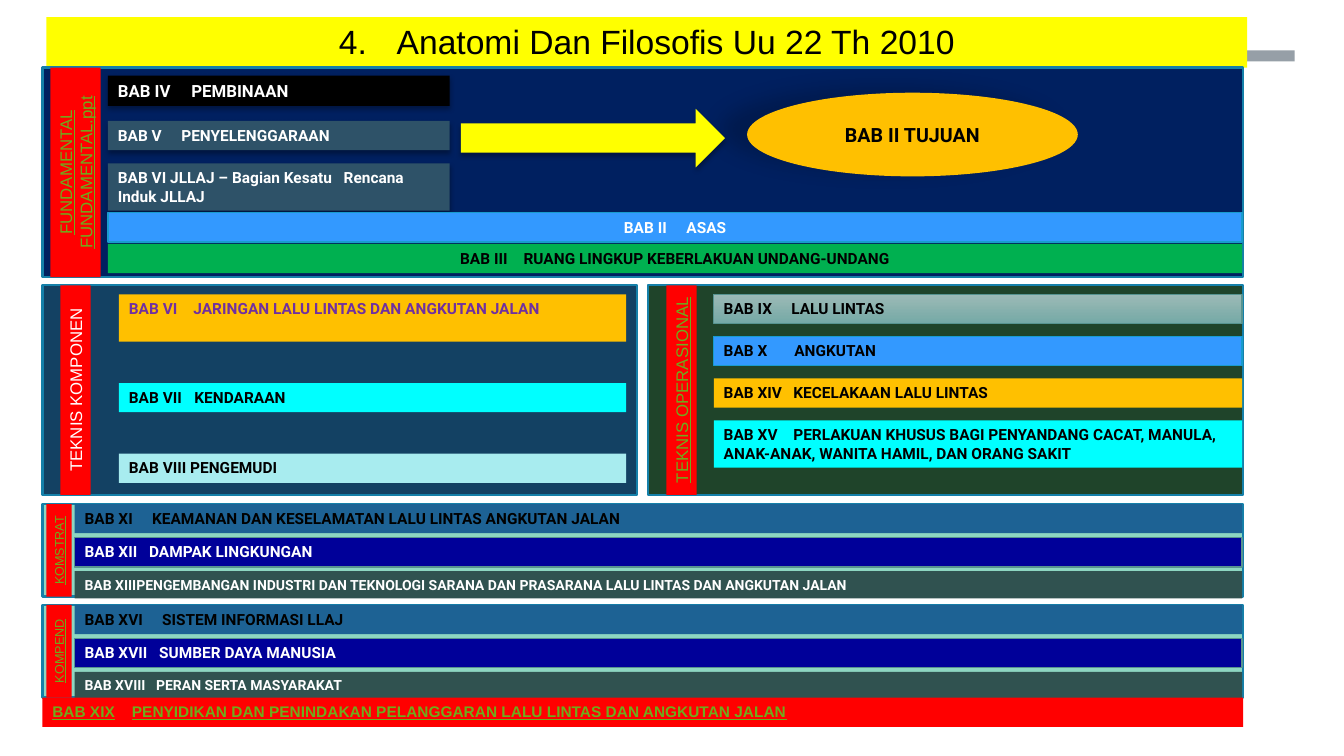
from dataclasses import dataclass

from lxml import etree
from pptx import Presentation
from pptx.dml.color import RGBColor
from pptx.enum import shapes, text
from pptx.oxml import ns
from pptx.util import Inches, Pt

RECT = shapes.MSO_SHAPE.RECTANGLE
LEFT, CENTER = text.PP_ALIGN.LEFT, text.PP_ALIGN.CENTER
BLACK, WHITE, RED, GREEN = "000000", "FFFFFF", "FF0000", "6EAC1C"
BAR_H, TALL_H = 0.29, 0.47
SOFT_SHADOW = (32, 3.5, 2.2, 90)
OVAL_SHADOW = (18, 14.5, 19, 192)


@dataclass
class Box:
    left: float
    top: float
    width: float
    height: float
    fill: str | tuple[str, str]
    line: str = ""
    line_w: float = 1
    shadow: tuple | None = None
    kind: int = RECT


@dataclass
class Bar(Box):
    text: str = ""
    color: str = BLACK
    tab: float = 0
    size: float = 11
    align: int = LEFT
    font: str = "Roboto"
    underline: bool = False


@dataclass
class Label:
    """A red strip whose text reads upwards."""
    left: float
    top: float
    width: float
    height: float
    lines: tuple[str, ...]
    size: float = 12
    color: str = GREEN


def rgb(value: str) -> RGBColor:
    return RGBColor.from_string(value)


def add_node(parent, tag: str, **attrs):
    values = {key: str(value) for key, value in attrs.items()}
    return etree.SubElement(parent, ns.qn(tag), values)


def add_shadow(sp, opacity: float, blur: float, dist: float, angle: float) -> None:
    effects = sp.element.spPr.find(ns.qn("a:effectLst"))
    outer = add_node(effects, "a:outerShdw", blurRad=Pt(blur), dist=Pt(dist),
                     dir=angle * 60000, algn="ctr", rotWithShape=0)
    color = add_node(outer, "a:srgbClr", val=BLACK)
    add_node(color, "a:alpha", val=opacity * 1000)


def add_box(s, box: Box):
    lengths = map(Inches, (box.left, box.top, box.width, box.height))
    sp = s.shapes.add_shape(box.kind, *lengths)
    sp.shadow.inherit = False
    if isinstance(box.fill, tuple):
        sp.fill.gradient()
        sp.fill.gradient_angle = 270
        for stop, color in zip(sp.fill.gradient_stops, box.fill):
            stop.color.rgb = rgb(color)
    else:
        sp.fill.solid()
        sp.fill.fore_color.rgb = rgb(box.fill)
    if box.line:
        sp.line.color.rgb = rgb(box.line)
        sp.line.width = Pt(box.line_w)
    else:
        sp.line.fill.background()
    if box.shadow:
        add_shadow(sp, *box.shadow)
    return sp


def write(p, words: str, color: str, align: int, **font_format) -> None:
    p.alignment = align
    r = p.add_run()
    r.text = words
    r.font.color.rgb = rgb(color)
    for name, value in font_format.items():
        setattr(r.font, name, value)


def add_bar(s, bar: Bar):
    sp = add_box(s, bar)
    tf = sp.text_frame
    tf.word_wrap = True
    tf.vertical_anchor = text.MSO_ANCHOR.TOP
    p = tf.paragraphs[0]
    write(p, bar.text, bar.color, bar.align, name=bar.font,
          size=Pt(bar.size), bold=True, underline=bar.underline)
    if bar.tab:
        tabs = add_node(p._p.get_or_add_pPr(), "a:tabLst")
        add_node(tabs, "a:tab", pos=Inches(bar.tab), algn="l")
    return sp


def add_label(s, label: Label) -> None:
    # The box is laid out flat around the strip's centre, then turned
    shift = (label.height - label.width) / 2
    sp = add_box(s, Box(label.left - shift, label.top + shift,
                        label.height, label.width, RED))
    sp.rotation = 270
    tf = sp.text_frame
    tf.word_wrap = True
    tf.vertical_anchor = text.MSO_ANCHOR.TOP
    for i, words in enumerate(label.lines):
        p = tf.add_paragraph() if i else tf.paragraphs[0]
        write(p, words, label.color, CENTER, name="Arial",
              size=Pt(label.size), underline=label.color == GREEN)


def add_panel(s, left: float, top: float, width: float, height: float, fill: str) -> None:
    add_box(s, Box(left, top, width, height, fill, "1580A9", 1.75))


def add_title(s) -> None:
    accent = add_box(s, Box(8.79, 0.5, 4.05, 0.11, "969FA7"))
    title = s.shapes.title
    title.element.addprevious(accent.element)
    title.left, title.top, title.width, title.height = map(Inches, (0.46, 0.17, 11.91, 0.5))
    title.fill.solid()
    title.fill.fore_color.rgb = rgb("FFFF00")
    tf = title.text_frame
    tf.auto_size = text.MSO_AUTO_SIZE.NONE
    tf.vertical_anchor = text.MSO_ANCHOR.MIDDLE
    p = tf.paragraphs[0]
    p.line_spacing = 0.99
    write(p, " Anatomi Dan Filosofis Uu 22 Th 2010", BLACK, CENTER,
          name="Arial", size=Pt(24))
    pPr = p._p.get_or_add_pPr()
    pPr.set("marL", str(Inches(0.5)))
    pPr.set("indent", str(Inches(-0.5)))
    add_node(pPr, "a:buFont", typeface="+mj-lt")
    add_node(pPr, "a:buAutoNum", type="arabicPeriod", startAt=4)


def add_fundamental(s) -> None:
    add_panel(s, 0.42, 0.67, 11.91, 2.08, "002060")
    for top, height, fill, words, tab, size in (
            (0.75, 0.3, BLACK, "BAB IV\tPEMBINAAN", 0.73, 12),
            (1.2, BAR_H, "2E5268", "BAB V\tPENYELENGGARAAN", 0.63, 11),
            (1.62, TALL_H, "2E5268",
             "BAB VI JLLAJ – Bagian Kesatu\tRencana Induk JLLAJ", 2.24, 11)):
        add_bar(s, Bar(1.07, top, 3.39, height, fill, shadow=SOFT_SHADOW,
                       text=words, color=WHITE, tab=tab, size=size))
    add_bar(s, Bar(1.07, 2.11, 11.25, BAR_H, "3399FF", "189CCE", text="BAB II\tASAS",
                   color=WHITE, tab=0.62, align=CENTER))
    add_bar(s, Bar(1.07, 2.42, 11.25, BAR_H, "00B050", tab=0.63, align=CENTER,
                   text="BAB III\tRUANG LINGKUP KEBERLAKUAN UNDANG-UNDANG"))
    goal = add_bar(s, Bar(7.41, 0.92, 3.28, 0.83, "FFC000", shadow=OVAL_SHADOW,
                          kind=shapes.MSO_SHAPE.OVAL, text="BAB II TUJUAN",
                          size=14, align=CENTER))
    goal.text_frame.vertical_anchor = text.MSO_ANCHOR.MIDDLE
    add_box(s, Box(4.57, 1.08, 2.62, 0.58, "FFFF00", shadow=SOFT_SHADOW,
                   kind=shapes.MSO_SHAPE.RIGHT_ARROW))
    add_label(s, Label(0.5, 0.67, 0.5, 2.08, ("FUNDAMENTAL", "FUNDAMENTAL.ppt")))


def add_technical(s) -> None:
    # Components
    add_panel(s, 0.42, 2.83, 5.9, 2.08, "134163")
    add_label(s, Label(0.6, 2.83, 0.3, 2.08, ("TEKNIS KOMPONEN",), color=WHITE))
    for top, height, fill, words, color, tab in (
            (2.92, TALL_H, "FFC000", "BAB VI\tJARINGAN LALU LINTAS DAN ANGKUTAN JALAN",
             "7030A0", 0.64),
            (3.8, BAR_H, "00FFFF", "BAB VII\tKENDARAAN", BLACK, 0.65),
            (4.5, BAR_H, "A8ECEF", "BAB VIII PENGEMUDI", BLACK, 0)):
        add_bar(s, Bar(1.18, top, 5.03, height, fill, text=words, color=color, tab=tab))

    # Operations
    add_panel(s, 6.43, 2.83, 5.9, 2.08, "1F442A")
    add_label(s, Label(6.61, 2.83, 0.3, 2.08, ("TEKNIS OPERASIONAL",)))
    for i, (height, fill, line, words, tab) in enumerate((
            (BAR_H, ("9CBAB6", "75A9A6"), "579490", "BAB IX\tLALU LINTAS", 0.67),
            (BAR_H, "3399FF", "189CCE", "BAB X\tANGKUTAN", 0.7),
            (BAR_H, "FFC000", "", "BAB XIV\tKECELAKAAN LALU LINTAS", 0.69),
            (TALL_H, "00FFFF", "", "BAB XV\tPERLAKUAN KHUSUS BAGI PENYANDANG CACAT, "
             "MANULA, ANAK-ANAK, WANITA HAMIL, DAN ORANG SAKIT", 0.69))):
        add_bar(s, Bar(7.08, 2.92 + i * 1.25 / 3, 5.24, height, fill, line,
                       text=words, tab=tab))


def add_support(s, top: float, name: str, chapters: tuple) -> None:
    add_panel(s, 0.42, top, 11.91, 0.92, "8DD6C1")
    styles = (("1D6294", "", BLACK, BAR_H, 11), ("000099", "579490", WHITE, BAR_H, 11),
              ("305250", "", WHITE, 0.27, 10))
    for i, ((words, tab), (fill, line, color, height, size)) in enumerate(zip(chapters, styles)):
        add_bar(s, Bar(0.74, top + i / 3, 11.58, height, fill, line,
                       text=words, color=color, tab=tab, size=size))
    add_label(s, Label(0.46, top, 0.25, 0.92, (name,), 9))


def main() -> None:
    prs = Presentation()
    prs.slide_width, prs.slide_height = Inches(13.33), Inches(7.5)
    s = prs.slides.add_slide(prs.slide_layouts[5])
    add_title(s)
    add_fundamental(s)
    add_technical(s)
    add_support(s, 5, "KOMSTRAT", (
        ("BAB XI\tKEAMANAN DAN KESELAMATAN LALU LINTAS ANGKUTAN JALAN", 0.67),
        ("BAB XII\tDAMPAK LINGKUNGAN", 0.64),
        ("BAB XIIIPENGEMBANGAN INDUSTRI DAN TEKNOLOGI SARANA DAN PRASARANA "
         "LALU LINTAS DAN ANGKUTAN JALAN", 0)))
    add_support(s, 6, "KOMPEND", (
        ("BAB XVI\tSISTEM INFORMASI LLAJ", 0.77), ("BAB XVII\tSUMBER DAYA MANUSIA", 0.74),
        ("BAB XVIII\tPERAN SERTA MASYARAKAT", 0.71)))
    # Closing chapter
    add_bar(s, Bar(0.42, 6.92, 11.91, BAR_H, RED, color=GREEN, tab=0.79, font="Arial",
                   text="BAB XIX\tPENYIDIKAN DAN PENINDAKAN PELANGGARAN LALU LINTAS "
                   "DAN ANGKUTAN JALAN", underline=True))
    prs.save("out.pptx")


if __name__ == "__main__":
    main()
